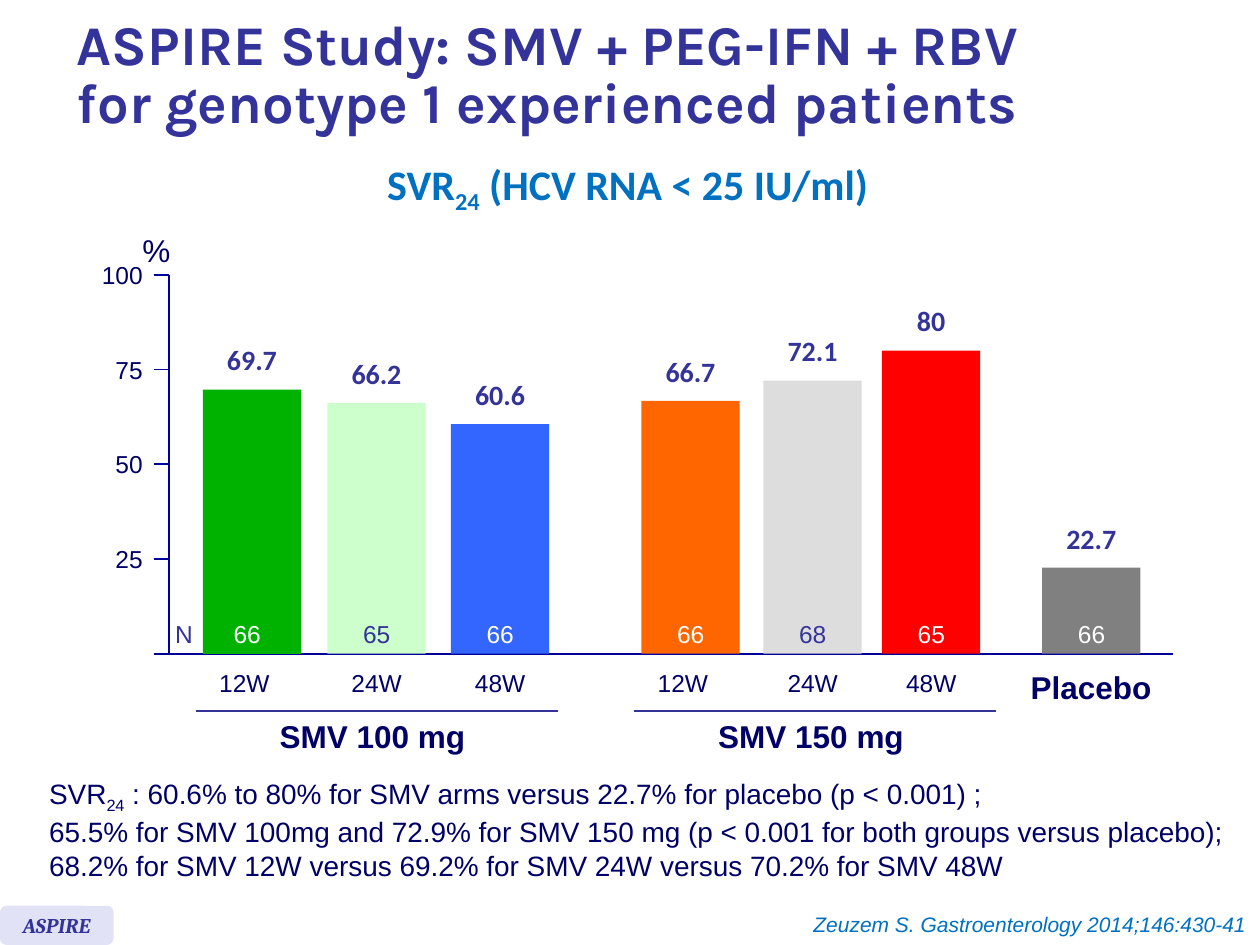
from dataclasses import dataclass

from lxml import etree
from pptx import Presentation
from pptx import util as u
from pptx.dml.color import RGBColor
from pptx.enum import shapes, text
from pptx.oxml import ns

NAVY = RGBColor(0x00, 0x00, 0x66)
AXIS_BLUE = RGBColor(0x00, 0x00, 0x99)
INDIGO = RGBColor(0x33, 0x33, 0x99)
BRIGHT_BLUE = RGBColor(0x00, 0x70, 0xC0)
LAVENDER = RGBColor(0xE2, 0xE2, 0xF6)
WHITE = RGBColor(0xFF, 0xFF, 0xFF)
GREEN = RGBColor(0x00, 0xB2, 0x00)
PALE_GREEN = RGBColor(0xCC, 0xFF, 0xCC)
BLUE = RGBColor(0x33, 0x66, 0xFF)
ORANGE = RGBColor(0xFF, 0x66, 0x00)
LIGHT_GREY = RGBColor(0xDD, 0xDD, 0xDD)
RED = RGBColor(0xFF, 0x00, 0x00)
GREY = RGBColor(0x80, 0x80, 0x80)

LEFT, CENTER, RIGHT = text.PP_ALIGN.LEFT, text.PP_ALIGN.CENTER, text.PP_ALIGN.RIGHT

BASELINE = 13.18
AXIS_TOP = 5.54
AXIS_X = 3.4
TICK_LEFT = 3.1
AXIS_RIGHT = 23.65
BAR_WIDTH = 1.98
SCALE = (BASELINE - AXIS_TOP) / 100


@dataclass
class Style:
    size: float
    color: RGBColor
    font: str = "Arial"
    bold: bool = False
    italic: bool = False


@dataclass
class Box:
    left: float
    top: float
    width: float
    height: float

    def lengths(self) -> list[u.Length]:
        return [u.Cm(value) for value in (self.left, self.top, self.width, self.height)]


@dataclass
class Arm:
    left: float
    rate: float
    patients: str
    duration: str
    fill: RGBColor
    count_color: RGBColor = WHITE
    count_shift: float = 0

    @property
    def center(self) -> float:
        return self.left + BAR_WIDTH / 2

    @property
    def top(self) -> float:
        return BASELINE - self.rate * SCALE


@dataclass
class DoseGroup:
    name: str
    left: float


ARMS = [
    Arm(4.09, 69.7, "66", "12W", GREEN, count_shift=-0.1),
    Arm(6.6, 66.2, "65", "24W", PALE_GREEN, INDIGO),
    Arm(9.09, 60.6, "66", "48W", BLUE),
    Arm(12.93, 66.7, "66", "12W", ORANGE),
    Arm(15.39, 72.1, "68", "24W", LIGHT_GREY, INDIGO),
    Arm(17.78, 80, "65", "48W", RED),
    Arm(21.01, 22.7, "66", "Placebo", GREY),
]
DOSE_GROUPS = [DoseGroup("SMV 100 mg", 4.09), DoseGroup("SMV 150 mg", 12.93)]

TICK_STYLE = Style(14, NAVY)
HEADING_STYLE = Style(18, NAVY, bold=True)
RATE_STYLE = Style(16, INDIGO, "Calibri", bold=True)


def add_run(paragraph, content: str, style: Style, subscript: bool = False) -> None:
    run = paragraph.add_run()
    run.text = content
    font = run.font
    font.size = u.Pt(style.size)
    font.name = style.font
    font.bold = style.bold
    font.italic = style.italic
    font.color.rgb = style.color
    if subscript:
        run._r.get_or_add_rPr().set("baseline", "-25000")


def add_box(slide, box: Box, wrap: bool = False, inset: tuple[float, float] = (0.25, 0.13)):
    frame = slide.shapes.add_textbox(*box.lengths()).text_frame
    frame.word_wrap = wrap
    frame.auto_size = text.MSO_AUTO_SIZE.SHAPE_TO_FIT_TEXT
    frame.margin_left = frame.margin_right = u.Cm(inset[0])
    frame.margin_top = frame.margin_bottom = u.Cm(inset[1])
    return frame


def add_label(slide, box: Box, content: str, style: Style, align=CENTER,
              inset: tuple[float, float] = (0.25, 0.13)) -> None:
    paragraph = add_box(slide, box, inset=inset).paragraphs[0]
    paragraph.alignment = align
    add_run(paragraph, content, style)


def add_line(slide, start: tuple[float, float], end: tuple[float, float],
             color: RGBColor = AXIS_BLUE, width: float = 1) -> None:
    points = [u.Cm(value) for value in (*start, *end)]
    connector = slide.shapes.add_connector(shapes.MSO_CONNECTOR.STRAIGHT, *points)
    connector.line.color.rgb = color
    connector.line.width = u.Pt(width)
    etree.SubElement(connector._element.spPr, ns.qn("a:effectLst"))


def add_filled(slide, kind, box: Box, fill: RGBColor):
    shape = slide.shapes.add_shape(kind, *box.lengths())
    shape.shadow.inherit = False
    shape.fill.solid()
    shape.fill.fore_color.rgb = fill
    shape.line.fill.background()
    return shape


def draw_axes(slide) -> None:
    add_line(slide, (AXIS_X, AXIS_TOP), (AXIS_X, BASELINE))
    add_line(slide, (TICK_LEFT, BASELINE), (AXIS_RIGHT, BASELINE))
    for rate in (25, 50, 75, 100):
        y = BASELINE - rate * SCALE
        add_line(slide, (TICK_LEFT, y), (AXIS_X, y))
        add_label(slide, Box(1.91, y - 0.3, 0.97, 0.61), str(rate), TICK_STYLE, RIGHT, (0, 0))
    add_label(slide, Box(2.62, 4.52, 1.27, 1.02), "%", Style(18, NAVY), LEFT)
    add_label(slide, Box(3.28, 12.34, 0.86, 0.86), "N", Style(14, INDIGO), LEFT)


def draw_arm(slide, arm: Arm) -> None:
    bar = Box(arm.left, arm.top, BAR_WIDTH, BASELINE - arm.top)
    add_filled(slide, shapes.MSO_SHAPE.RECTANGLE, bar, arm.fill)
    add_label(slide, Box(arm.center - 0.76, arm.top - 1.19, 1.52, 1.19),
              f"{arm.rate:g}", RATE_STYLE, inset=(0.25, 0.25))
    add_label(slide, Box(arm.center + arm.count_shift - 0.53, 12.34, 1.07, 0.86),
              arm.patients, Style(14, arm.count_color))
    if arm.duration == "Placebo":
        add_label(slide, Box(arm.center - 1.49, 13.34, 2.97, 1.02), arm.duration, HEADING_STYLE)
    else:
        align = LEFT if arm.duration == "12W" else CENTER
        add_label(slide, Box(arm.center - 0.91, 13.34, 1.83, 0.86), arm.duration, TICK_STYLE, align)


def draw_dose_group(slide, group: DoseGroup) -> None:
    start = group.left - 0.14
    add_line(slide, (start, 14.33), (start + 7.29, 14.33), INDIGO, 1.5)
    add_label(slide, Box(group.left + 1.3, 14.33, 4.29, 1.02), group.name, HEADING_STYLE, LEFT)


def draw_headings(slide) -> None:
    frame = add_box(slide, Box(1.3, 0.2, 23.19, 2.72), wrap=True)
    frame.auto_size = text.MSO_AUTO_SIZE.NONE
    frame.vertical_anchor = text.MSO_ANCHOR.MIDDLE
    title = frame.paragraphs[0]
    title.line_spacing = 0.85
    style = Style(32, INDIGO, "Karla", bold=True)
    add_run(title, "ASPIRE Study: SMV + PEG-IFN + RBV", style)
    title.add_line_break()
    add_run(title, "for genotype 1 experienced patients", style)

    subtitle = add_box(slide, Box(7.32, 3.68, 10.67, 0.89)).paragraphs[0]
    subtitle.alignment = CENTER
    subtitle.line_spacing = u.Pt(15.2)
    style = Style(24, BRIGHT_BLUE, "Calibri", bold=True)
    add_run(subtitle, "SVR", style)
    add_run(subtitle, "24", style, subscript=True)
    add_run(subtitle, " (HCV RNA < 25 IU/ml)", style)


def draw_summary(slide) -> None:
    style = Style(16, NAVY)
    frame = add_box(slide, Box(0.74, 15.52, 24.36, 2.77), wrap=True)
    first = frame.paragraphs[0]
    add_run(first, "SVR", style)
    add_run(first, "24", style, subscript=True)
    add_run(first, " : 60.6% to 80% for SMV arms versus 22.7% for placebo (p < 0.001) ;", style)
    for content in (
        "65.5% for SMV 100mg and 72.9% for SMV 150 mg (p < 0.001 for both groups versus placebo);",
        "68.2% for SMV 12W versus 69.2% for SMV 24W versus 70.2% for SMV 48W",
    ):
        add_run(frame.add_paragraph(), content, style)


def draw_footer(slide) -> None:
    add_label(slide, Box(15.88, 18.24, 9.5, 0.76), "Zeuzem S. Gastroenterology 2014;146:430-41",
              Style(12, BRIGHT_BLUE, italic=True), RIGHT)
    badge = add_filled(slide, shapes.MSO_SHAPE.ROUNDED_RECTANGLE, Box(0, 18.26, 2.29, 0.79), LAVENDER)
    badge.text_frame.word_wrap = False
    badge.text_frame.vertical_anchor = text.MSO_ANCHOR.MIDDLE
    paragraph = badge.text_frame.paragraphs[0]
    paragraph.alignment = CENTER
    add_run(paragraph, "ASPIRE", Style(12, INDIGO, "Cambria", bold=True, italic=True))


def main() -> None:
    presentation = Presentation()
    presentation.slide_width, presentation.slide_height = u.Cm(25.4), u.Cm(19.05)
    slide = presentation.slides.add_slide(presentation.slide_layouts[6])
    draw_headings(slide)
    draw_axes(slide)
    for arm in ARMS:
        draw_arm(slide, arm)
    for group in DOSE_GROUPS:
        draw_dose_group(slide, group)
    draw_summary(slide)
    draw_footer(slide)
    presentation.save("out.pptx")


if __name__ == "__main__":
    main()
